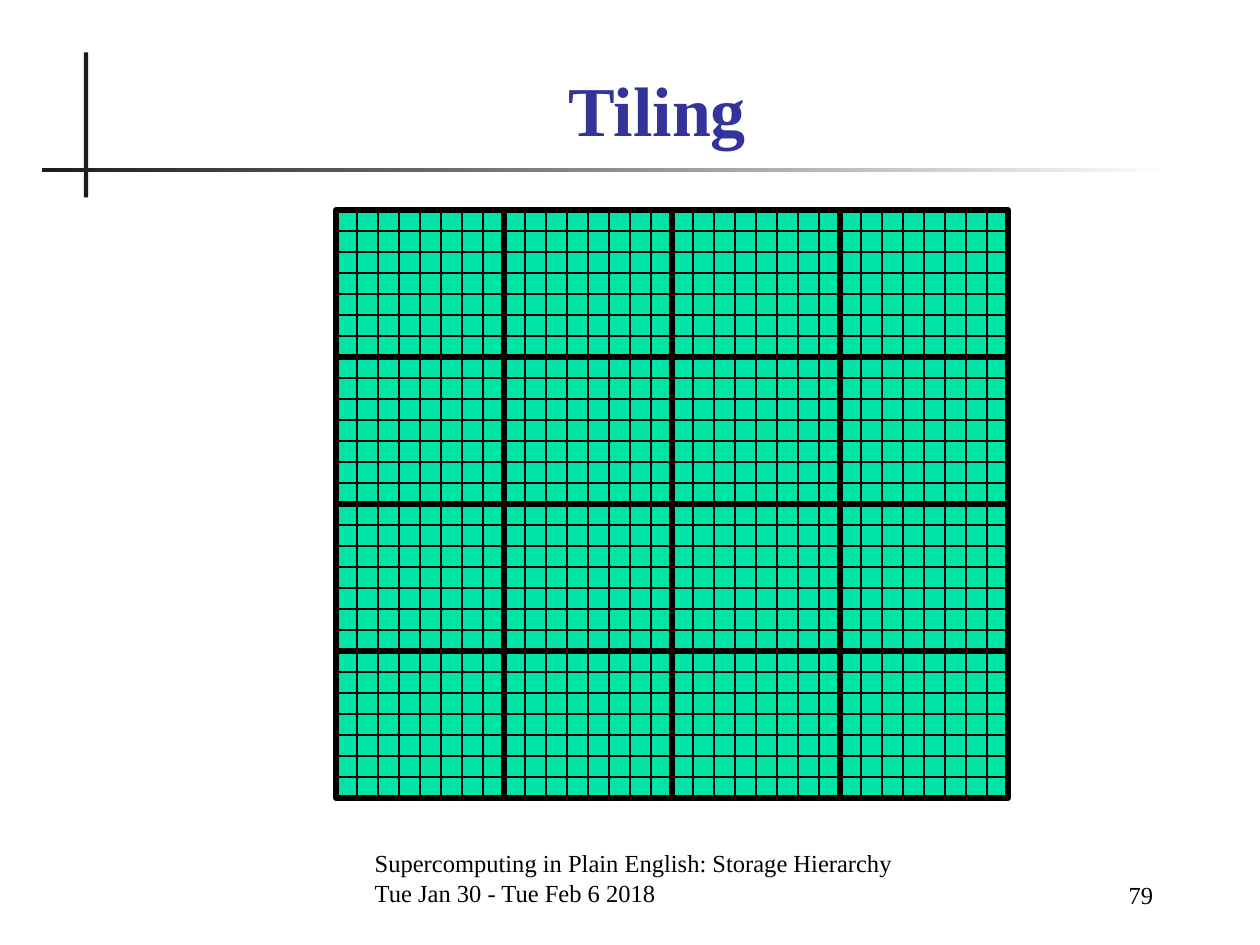
from pptx import Presentation
from pptx.util import Inches, Pt
from pptx.dml.color import RGBColor
from pptx.enum.shapes import MSO_SHAPE as Shape, MSO_CONNECTOR as Link
from pptx.enum.text import PP_ALIGN as Align, MSO_ANCHOR as Anchor
from pptx.oxml.ns import qn
from lxml import etree

BLACK = RGBColor(0x00, 0x00, 0x00)
WHITE = RGBColor(0xFF, 0xFF, 0xFF)
DARK = RGBColor(0x1C, 0x1C, 0x1C)
BLUE = RGBColor(0x33, 0x33, 0x99)
GREEN = RGBColor(0x00, 0xE4, 0xA8)

# The slide is a grid of 60 by 45 cells, six to the inch
CELL = Inches(1) // 6
LEFT, TOP = 16, 10            # first cell of the sheet
COLS, ROWS = 32, 28           # cells in the sheet
WIDE, HIGH = 8, 7             # cells in a tile

prs = Presentation()
prs.slide_width, prs.slide_height = 60 * CELL, 45 * CELL
slide = prs.slides.add_slide(prs.slide_layouts[6])


def add_box(shapes, x, y, w, h):
    box = shapes.add_shape(Shape.RECTANGLE, *(int(v * CELL) for v in (x, y, w, h)))
    box.shadow.inherit = False
    return box


def add_rule(shapes, x1, y1, x2, y2):
    rule = shapes.add_connector(Link.STRAIGHT, *(v * CELL for v in (x1, y1, x2, y2)))
    rule.line.color.rgb = BLACK
    rule.line.width = Pt(0.75)
    etree.SubElement(rule._element.spPr, qn("a:effectLst"))
    return rule


# Crossed bars beside and below the title
post = add_box(slide.shapes, 4, 2.5, 0.2, 6.9)
post.fill.solid()
post.fill.fore_color.rgb = DARK
post.line.fill.background()

bar = add_box(slide.shapes, 2, 8, 54, 0.2)
bar.fill.gradient()
bar.fill.gradient_angle = 0
for stop, color in zip(bar.fill.gradient_stops, (DARK, WHITE)):
    stop.color.rgb = color
bar.line.fill.background()

# Title, footer and page number
footer = ["Supercomputing in Plain English: Storage Hierarchy",
          "Tue Jan 30 - Tue Feb 6 2018"]
plain = {"name": "Times New Roman", "size": Pt(14), "bold": False}
strong = {"name": "Times New Roman", "size": Pt(40), "bold": True}
texts = [
    (footer, (17.25, 40.5, 26.25, 3), Align.LEFT, plain, BLACK),
    (["79"], (47, 40.6, 8.5, 3), Align.RIGHT, plain, BLACK),
    (["Tiling"], (5, 3, 52.6, 4.45), Align.CENTER, strong, BLUE),
]
for lines, place, align, style, color in texts:
    frame = slide.shapes.add_textbox(*(int(v * CELL) for v in place)).text_frame
    frame.word_wrap = True
    frame.vertical_anchor = Anchor.BOTTOM
    frame.text = "\n".join(lines)
    for para in frame.paragraphs:
        para.alignment = align
        for key, value in style.items():
            setattr(para.font, key, value)
        para.font.color.rgb = color

# Green sheet
group = slide.shapes.add_group_shape().shapes
sheet = add_box(group, LEFT, TOP, COLS, ROWS)
sheet.fill.solid()
sheet.fill.fore_color.rgb = GREEN
sheet.line.color.rgb = BLACK
sheet.line.width = Pt(0.75)

# Thin cell lines; the middle ones join the sheet's sides
for col in range(1, COLS):
    rule = add_rule(group, LEFT + col, TOP, LEFT + col, TOP + ROWS)
    if col == COLS // 2:
        rule.begin_connect(sheet, 0)
        rule.end_connect(sheet, 2)
for row in range(1, ROWS):
    rule = add_rule(group, LEFT, TOP + row, LEFT + COLS, TOP + row)
    if row == ROWS // 2:
        rule.begin_connect(sheet, 1)
        rule.end_connect(sheet, 3)

# Thick tile outlines
for y in range(TOP, TOP + ROWS, HIGH):
    for x in range(LEFT, LEFT + COLS, WIDE):
        tile = add_box(group, x, y, WIDE, HIGH)
        tile.fill.background()
        tile.line.color.rgb = BLACK
        tile.line.width = Pt(3)

prs.save("out.pptx")
